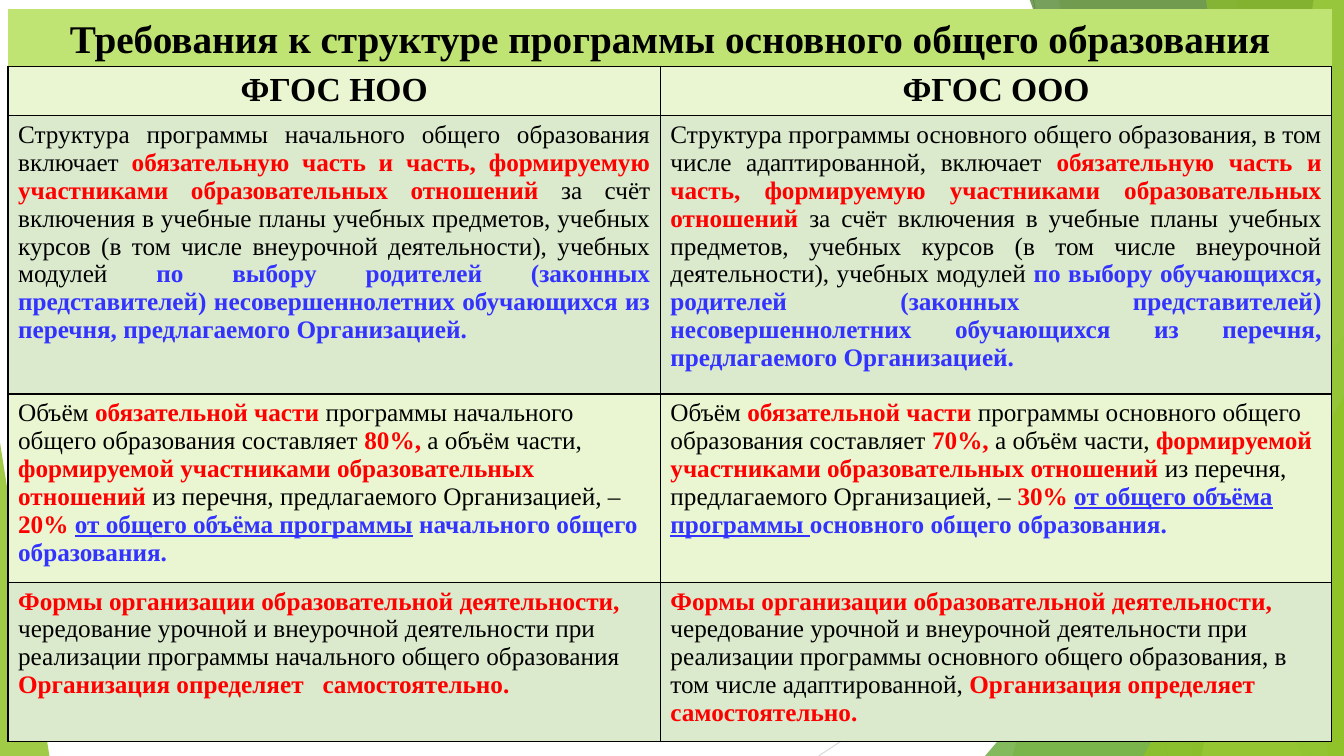
from typing import NamedTuple

from lxml import etree
from pptx import Presentation
from pptx.dml.color import RGBColor
from pptx.enum.shapes import MSO_CONNECTOR, MSO_SHAPE
from pptx.enum.text import MSO_ANCHOR, MSO_AUTO_SIZE, PP_ALIGN
from pptx.oxml.ns import qn
from pptx.util import Pt

SCALE = 9144
W, H = 1333, 750
FONT = "Times New Roman"
STRAIGHT = MSO_CONNECTOR.STRAIGHT
TRIANGLE = MSO_SHAPE.RIGHT_TRIANGLE
ISOSCELES = MSO_SHAPE.ISOSCELES_TRIANGLE
BOTTOM = MSO_ANCHOR.BOTTOM
NO_FIT = MSO_AUTO_SIZE.NONE
LEFT, CENTER, JUSTIFY = PP_ALIGN.LEFT, PP_ALIGN.CENTER, PP_ALIGN.JUSTIFY
BLACK, RED, BLUE = "000000", "FF0000", "3333FF"
PALE, SAGE, LIME, LEAF = "EAF6D1", "DBE9CD", "C0E474", "90C226"


class Line(NamedTuple):
    x1: int
    y1: int
    x2: int
    y2: int
    color: str


class Band(NamedTuple):
    top: int
    bottom: int
    color: str
    alpha: int


class Triangle(NamedTuple):
    x: int
    y: int
    w: int
    h: int
    apex: int
    color: str
    alpha: int


class Run(NamedTuple):
    text: str
    color: str = BLACK
    bold: bool = False
    underline: bool = False


class Row(NamedTuple):
    height: int
    fill: str
    align: PP_ALIGN
    size: int
    cells: list[list[Run]]


LINES = [Line(1025, 0, 1158, H, "BFBFBF"), Line(W, 403, 812, H, "D9D9D9")]
BACK_BANDS = [Band(1228, 1004, LEAF, 30), Band(1050, 1183, LEAF, 20)]
FRONT_BANDS = [
    Band(1021, 1291, "3F7819", 70),
    Band(1303, 1192, LIME, 70),
    Band(1196, 1318, LEAF, 65),
]
BACK_TRIANGLE = Triangle(977, 333, 356, 417, 1, "54A021", 72)
FRONT_TRIANGLES = [
    Triangle(1134, 393, 199, 357, 1, LEAF, 80),
    Triangle(0, 439, 49, 311, 0, LEAF, 85),
]

TITLE = "Требования к структуре программы основного общего образования"
PARTS = Run("обязательную часть и часть, формируемую участниками образовательных отношений ", RED, True)
PLANS = Run("за счёт включения в учебные планы учебных предметов, учебных курсов "
            "(в том числе внеурочной деятельности), учебных модулей ")
VOLUME = [Run("Объём "), Run("обязательной части ", RED, True)]
REST = [Run("а объём части, "),
        Run("формируемой участниками образовательных отношений ", RED, True),
        Run("из перечня, предлагаемого Организацией, – ")]
FORMS = Run("Формы организации образовательной деятельности, ", RED, True)

COLUMNS = [647, 666]
ROWS = [
    Row(49, PALE, CENTER, 24, [[Run("ФГОС НОО", bold=True)], [Run("ФГОС ООО", bold=True)]]),
    Row(276, SAGE, JUSTIFY, 18, [
        [Run("Структура программы начального общего образования включает "), PARTS, PLANS,
         Run("по выбору родителей (законных представителей) несовершеннолетних обучающихся "
             "из перечня, предлагаемого Организацией.", BLUE, True)],
        [Run("Структура программы основного общего образования, в том числе адаптированной, включает "),
         PARTS, PLANS,
         Run("по выбору обучающихся, родителей (законных представителей) несовершеннолетних "
             "обучающихся из перечня, предлагаемого Организацией.", BLUE, True)],
    ]),
    Row(187, PALE, LEFT, 18, [
        [*VOLUME, Run("программы начального общего образования составляет "), Run("80%, ", RED, True),
         *REST, Run("20% ", RED, True), Run("от общего объёма программы", BLUE, True, True),
         Run(" начального общего образования.", BLUE, True)],
        [*VOLUME, Run("программы основного общего образования составляет "), Run("70%, ", RED, True),
         *REST, Run("30% ", RED, True), Run("от общего объёма программы ", BLUE, True, True),
         Run("основного общего образования.", BLUE, True)],
    ]),
    Row(158, SAGE, LEFT, 18, [
        [FORMS, Run("чередование урочной и внеурочной деятельности при реализации программы "
                    "начального общего образования "),
         Run("Организация определяет   самостоятельно.", RED, True)],
        [FORMS, Run("чередование урочной и внеурочной деятельности при реализации программы "
                    "основного общего образования, в том числе адаптированной, "),
         Run("Организация определяет самостоятельно.", RED, True)],
    ]),
]


def px(n: int) -> int:
    return n * SCALE


def rgb(color: str) -> RGBColor:
    return RGBColor.from_string(color)


def paint(shape, color: str, alpha: int) -> None:
    shape.shadow.inherit = False
    shape.line.fill.background()
    shape.fill.solid()
    shape.fill.fore_color.rgb = rgb(color)
    clr = shape._element.spPr.find(qn("a:solidFill"))[0]
    etree.SubElement(clr, qn("a:alpha"), val=str(alpha * 1000))


def draw_line(s, line: Line) -> None:
    c = s.shapes.add_connector(STRAIGHT, px(line.x1), px(line.y1), px(line.x2), px(line.y2))
    c.line.color.rgb = rgb(line.color)
    c.line.width = Pt(0.75)
    etree.SubElement(c._element.spPr, qn("a:effectLst"))


def draw_band(s, band: Band) -> None:
    builder = s.shapes.build_freeform(band.top, -1, scale=SCALE)
    builder.add_line_segments([(W, -1), (W, H), (band.bottom, H)], close=True)
    paint(builder.convert_to_shape(), band.color, band.alpha)


def draw_triangle(s, t: Triangle) -> None:
    sp = s.shapes.add_shape(ISOSCELES, px(t.x), px(t.y), px(t.w), px(t.h))
    sp.adjustments[0] = t.apex
    paint(sp, t.color, t.alpha)


def write(p, runs: list[Run], size: int, align: PP_ALIGN) -> None:
    p.alignment = align
    p.font.name = FONT
    p.font.size = Pt(size)
    for run in runs:
        r = p.add_run()
        r.text = run.text
        r.font.color.rgb = rgb(run.color)
        r.font.bold = run.bold
        r.font.underline = run.underline


def draw_title(s) -> None:
    sp = s.shapes.title
    s.shapes._spTree.append(sp._element)
    sp.left, sp.top, sp.width, sp.height = px(8), px(9), px(1313), px(57)
    sp.fill.solid()
    sp.fill.fore_color.rgb = rgb(LIME)
    tf = sp.text_frame
    tf.auto_size = NO_FIT
    tf.word_wrap = True
    tf.vertical_anchor = BOTTOM
    write(tf.paragraphs[0], [Run(TITLE, bold=True)], 28, CENTER)


def add_borders(cell) -> None:
    tc_pr = cell._tc.get_or_add_tcPr()
    for side in ("a:lnL", "a:lnR", "a:lnT", "a:lnB"):
        ln = etree.SubElement(tc_pr, qn(side), w=str(Pt(1)))
        fill = etree.SubElement(ln, qn("a:solidFill"))
        etree.SubElement(fill, qn("a:srgbClr"), val=BLACK)


def draw_table(s) -> None:
    height = sum(row.height for row in ROWS)
    frame = s.shapes.add_table(len(ROWS), len(COLUMNS), px(8), px(66), px(sum(COLUMNS)), px(height))
    table = frame.table
    for column, width in zip(table.columns, COLUMNS):
        column.width = px(width)
    for i, row in enumerate(ROWS):
        table.rows[i].height = px(row.height)
        for j, runs in enumerate(row.cells):
            cell = table.cell(i, j)
            add_borders(cell)
            cell.fill.solid()
            cell.fill.fore_color.rgb = rgb(row.fill)
            write(cell.text_frame.paragraphs[0], runs, row.size, row.align)


def main() -> None:
    prs = Presentation()
    prs.slide_width, prs.slide_height = px(W), px(H)
    s = prs.slides.add_slide(prs.slide_layouts[5])
    for line in LINES:
        draw_line(s, line)
    for band in BACK_BANDS:
        draw_band(s, band)
    draw_triangle(s, BACK_TRIANGLE)
    for band in FRONT_BANDS:
        draw_band(s, band)
    for triangle in FRONT_TRIANGLES:
        draw_triangle(s, triangle)
    draw_title(s)
    draw_table(s)
    prs.save("out.pptx")


if __name__ == "__main__":
    main()
